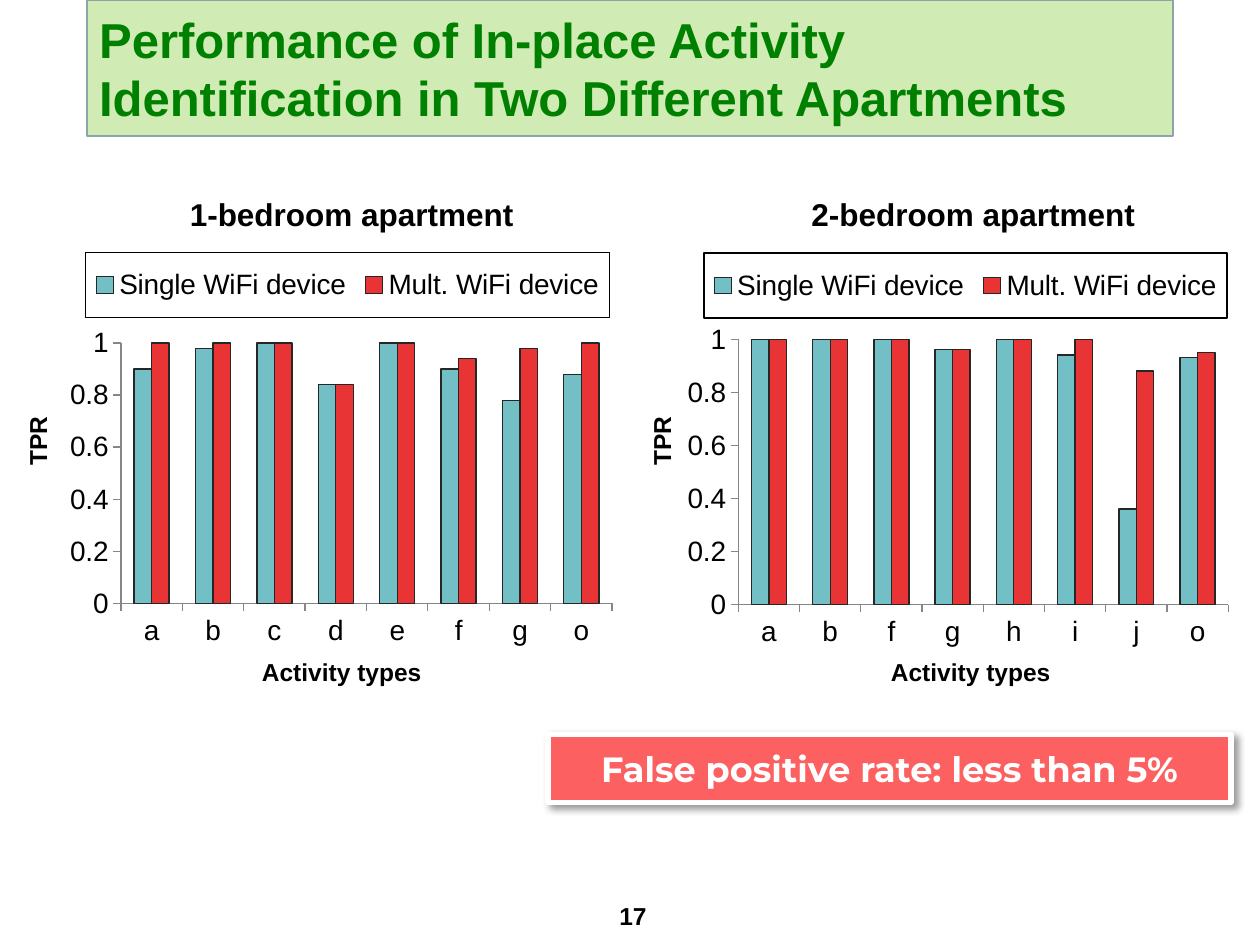
"""Build the slide comparing activity identification in two apartments."""
import pptx
import pptx.chart.data
import pptx.dml.color
import pptx.enum.chart
import pptx.enum.shapes
import pptx.enum.text
import pptx.oxml
import pptx.oxml.ns
import pptx.util

Cm, Pt = pptx.util.Cm, pptx.util.Pt
Align, Anchor = pptx.enum.text.PP_ALIGN, pptx.enum.text.MSO_ANCHOR
Enum = pptx.enum.chart

TITLE = "Performance of In-place Activity Identification in Two Different Apartments"
NOTE = "False positive rate: less than 5%"
PAGE = "17"
NAMES = ("Single WiFi device", "Mult. WiFi device")
PANELS = [
    {
        "head": "1-bedroom apartment",
        "mids": (7.09, 6.89, 0.76),
        "box": (0.94, 5.08, 11.79, 8.69),
        "plot": (0.127, 0.21, 0.84, 0.605),
        "key": (0.067, 0, 0.895, 0.15),
        "cats": "abcdefgo",
        "rates": ((0.9, 0.98, 1, 0.84, 1, 0.9, 0.78, 0.88),
                  (1, 1, 1, 0.84, 1, 0.94, 0.98, 1)),
    },
    {
        "head": "2-bedroom apartment",
        "mids": (19.62, 19.57, 13.34),
        "box": (13.39, 4.65, 11.76, 8.86),
        "plot": (0.127, 0.247, 0.84, 0.604),
        "key": (0.068, 0.051, 0.897, 0.148),
        "cats": "abfghijo",
        "rates": ((1, 1, 1, 0.96, 1, 0.94, 0.36, 0.93),
                  (1, 1, 1, 0.96, 1, 1, 0.88, 0.95)),
    },
]
THEME = {
    "font": "Arial", "accent": "Montserrat",
    "ink": "000000", "white": "FFFFFF",
    "title": "008000", "band": "D0EBB3", "edge": "8AA6A8",
    "note": "FC6060", "bars": ("72BFC5", "E83434"),
    "rim": "262626", "axis": "868686",
    "big": 28, "call": 20, "head": 18, "chart": 16, "small": 14,
}
SHADOW = (
    '<a:effectLst %s><a:outerShdw blurRad="50800" dist="38100" dir="2700000" '
    'algn="tl" rotWithShape="0"><a:srgbClr val="000000"><a:alpha val="40000"/>'
    '</a:srgbClr></a:outerShdw></a:effectLst>' % pptx.oxml.ns.nsdecls("a"))


def apply(item, **values):
    for name, value in values.items():
        setattr(item, name, value)


def rgb(name):
    return pptx.dml.color.RGBColor.from_string(THEME.get(name, name))


def paint(item, fill, line, width):
    item.fill.solid()
    item.fill.fore_color.rgb = rgb(fill)
    stroke(item.line, line, width)


def stroke(line, color, width):
    line.color.rgb = rgb(color)
    line.width = Pt(width)


def write(shape, text, size, color="ink", font="font", align=Align.CENTER, **frame):
    body = shape.text_frame
    apply(body, word_wrap=True, **frame)
    para = body.paragraphs[0]
    para.alignment = align
    run = para.add_run()
    run.text = text
    apply(run.font, name=THEME[font], size=Pt(THEME[size]), bold=True)
    run.font.color.rgb = rgb(color)


def label(slide, text, size, box, turn=0):
    shape = slide.shapes.add_textbox(*map(Cm, box))
    shape.rotation = turn
    write(shape, text, size)


def block(slide, box, fill, line, width):
    kind = pptx.enum.shapes.MSO_SHAPE.RECTANGLE
    shape = slide.shapes.add_shape(kind, *map(Cm, box))
    shape.shadow.inherit = False
    paint(shape, fill, line, width)
    return shape


def layout(box, inner=False):
    tags = [("layoutTarget", "inner")] if inner else []
    tags += [("xMode", "edge"), ("yMode", "edge"), *zip("xywh", box)]
    parts = "".join(f'<c:{tag} val="{value}"/>' for tag, value in tags)
    return pptx.oxml.parse_xml(
        f'<c:layout {pptx.oxml.ns.nsdecls("c")}>'
        f'<c:manualLayout>{parts}</c:manualLayout></c:layout>')


def place(node, box, inner=False):
    for old in node.findall(pptx.oxml.ns.qn("c:layout")):
        node.remove(old)
    node.insert(0 if inner else 1, layout(box, inner))


def graph(slide, panel):
    data = pptx.chart.data.CategoryChartData()
    data.categories = list(panel["cats"])
    for name, rates in zip(NAMES, panel["rates"]):
        data.add_series(name, rates)
    chart = slide.shapes.add_chart(
        Enum.XL_CHART_TYPE.COLUMN_CLUSTERED, *map(Cm, panel["box"]), data).chart
    apply(chart, has_title=False, has_legend=True)
    apply(chart.font, name=THEME["font"], size=Pt(THEME["chart"]))
    chart.font.color.rgb = rgb("ink")
    apply(chart.plots[0], gap_width=150, overlap=0, vary_by_categories=False)
    for bars, color in zip(chart.plots[0].series, THEME["bars"]):
        paint(bars.format, color, "rim", 0.75)
    for axis in (chart.category_axis, chart.value_axis):
        apply(axis, has_major_gridlines=False,
              major_tick_mark=Enum.XL_TICK_MARK.OUTSIDE,
              minor_tick_mark=Enum.XL_TICK_MARK.NONE)
        stroke(axis.format.line, "axis", 0.75)
    apply(chart.value_axis, minimum_scale=0, maximum_scale=1, major_unit=0.2)
    key = chart.legend
    apply(key, position=Enum.XL_LEGEND_POSITION.RIGHT, include_in_layout=True)
    apply(key.font, name=THEME["font"], size=Pt(THEME["chart"]))
    place(key._element, panel["key"])
    frame = pptx.oxml.parse_xml(
        f'<c:spPr {pptx.oxml.ns.nsdecls("c", "a")}><a:ln w="9525"><a:solidFill>'
        f'<a:srgbClr val="{THEME["ink"]}"/></a:solidFill></a:ln></c:spPr>')
    key._element.find(pptx.oxml.ns.qn("c:txPr")).addprevious(frame)
    place(chart._chartSpace.chart.plotArea, panel["plot"], True)


def main():
    deck = pptx.Presentation()
    apply(deck, slide_width=Cm(25.4), slide_height=Cm(19.05))
    slide = deck.slides.add_slide(deck.slide_layouts[6])
    band = block(slide, (1.75, 0, 21.9, 2.74), "band", "edge", 1)
    write(band, TITLE, "big", "title", align=Align.LEFT,
          vertical_anchor=Anchor.MIDDLE)
    label(slide, PAGE, "small", (9.8, 18.03, 5.92, 0.94))
    for panel in PANELS:
        head, base, side = panel["mids"]
        rows = ((panel["head"], "head", head, 3.81, 8.6, 1.02, 0),
                ("Activity types", "small", base, 13.13, 7, 0.86, 0),
                ("TPR", "small", side, 8.46, 5.08, 0.86, 270))
        for text, size, mid, top, width, height, turn in rows:
            label(slide, text, size, (mid - width / 2, top, width, height), turn)
        graph(slide, panel)
    note = block(slide, (11.05, 14.81, 13.77, 1.37), "note", "white", 3)
    props = note._element.spPr
    props.remove(props.find(pptx.oxml.ns.qn("a:effectLst")))
    props.append(pptx.oxml.parse_xml(SHADOW))
    write(note, NOTE, "call", "white", "accent", vertical_anchor=Anchor.MIDDLE,
          margin_left=Cm(0.51), margin_right=Cm(0.51),
          margin_top=Cm(0.25), margin_bottom=Cm(0.25))
    deck.save("out.pptx")


if __name__ == "__main__":
    main()
